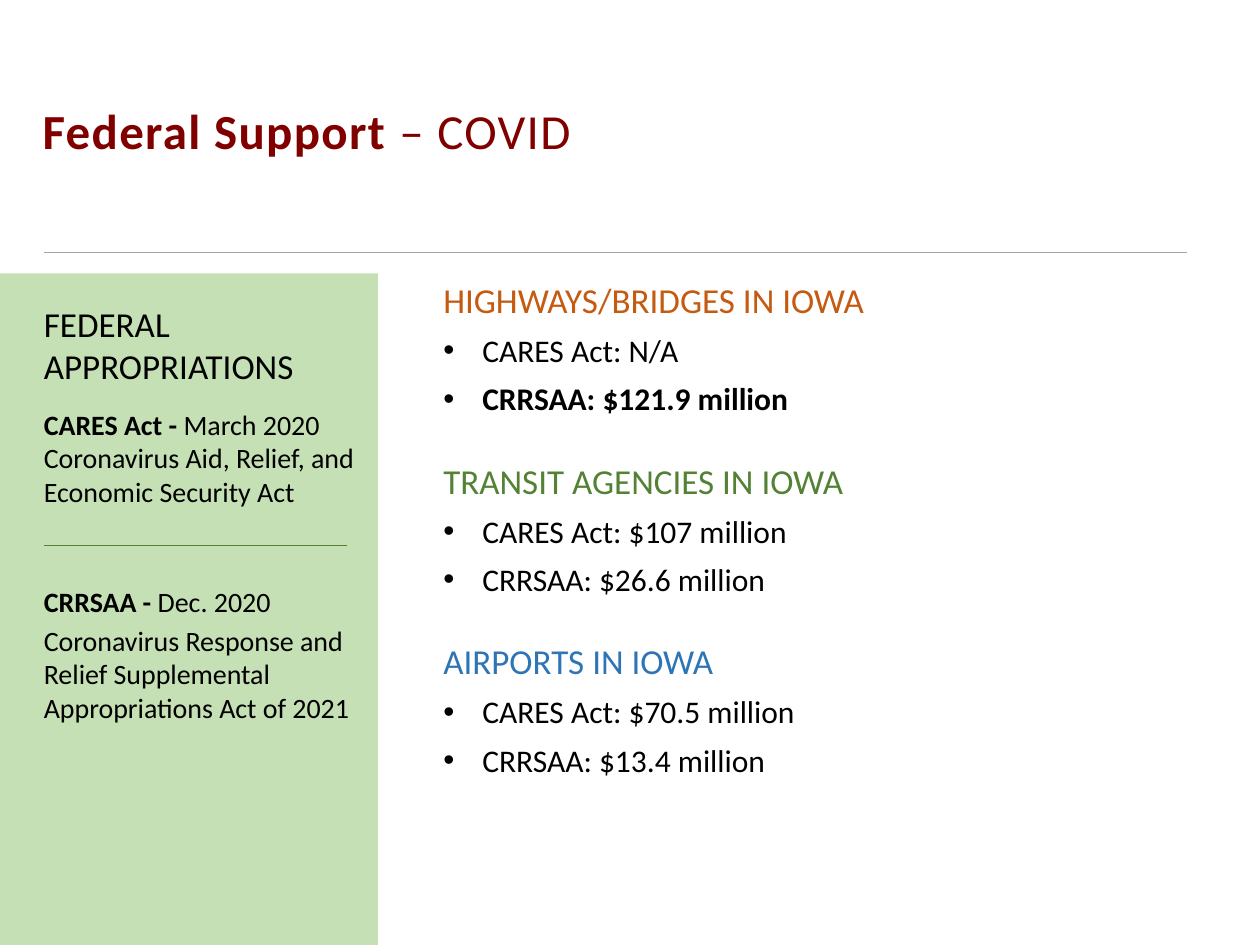
from dataclasses import dataclass

from lxml.etree import SubElement
from pptx import Presentation
from pptx.dml.color import RGBColor
from pptx.enum.shapes import MSO_CONNECTOR as Connector, MSO_SHAPE as Shape
from pptx.oxml.ns import qn
from pptx.util import Inches, Pt


@dataclass(frozen=True)
class Theme:
    font: str = "Calibri"
    title_size: int = 28
    heading_size: int = 20
    bullet_size: int = 18
    note_size: int = 16
    title: str = "800000"
    text: str = "000000"
    panel: str = "C5E0B4"
    rule: str = "A5A5A5"
    orange: str = "C55A11"
    green: str = "548235"
    blue: str = "2E75B6"


THEME = Theme()
CELL = Inches(0.25)
COLUMNS, ROWS = 40, 30
SECTIONS = [
    ("HIGHWAYS/BRIDGES IN IOWA", THEME.orange,
     [("CARES Act: N/A", False), ("CRRSAA: $121.9 million", True)]),
    ("TRANSIT AGENCIES IN IOWA", THEME.green,
     [("CARES Act: $107 million", False), ("CRRSAA: $26.6 million", False)]),
    ("AIRPORTS IN IOWA", THEME.blue,
     [("CARES Act: $70.5 million", False), ("CRRSAA: $13.4 million", False)]),
]


def cells(*counts):
    """Turn counts of grid cells into lengths."""
    return [round(count * CELL) for count in counts]


def add_panel(page, color, *place):
    panel = page.shapes.add_shape(Shape.RECTANGLE, *cells(*place))
    panel.shadow.inherit = False
    panel.fill.solid()
    panel.fill.fore_color.rgb = RGBColor.from_string(color)
    panel.line.fill.background()


def add_rule(page, color, left, right, row):
    rule = page.shapes.add_connector(
        Connector.STRAIGHT, *cells(left, row, right, row))
    rule.line.color.rgb = RGBColor.from_string(color)
    rule.line.width = Pt(0.5)
    SubElement(rule._element.spPr, qn("a:effectLst"))


def add_text(page, *place):
    """Add a wrapping text box and return its frame."""
    frame = page.shapes.add_textbox(*cells(*place)).text_frame
    frame.word_wrap = True
    return frame


def add_para(frame, spans, size, color=THEME.text, after=0, tracking=0):
    """Add a paragraph of (text, bold) spans, using the empty first one."""
    first = frame.paragraphs[0]
    para = frame.add_paragraph() if first.runs else first
    para.space_after = Pt(after)
    for text, bold in spans:
        span = para.add_run()
        span.text = text
        look = {"name": THEME.font, "size": Pt(size), "bold": bold}
        for name, value in look.items():
            setattr(span.font, name, value)
        span.font.color.rgb = RGBColor.from_string(color)
        if tracking:
            span._r.get_or_add_rPr().set("spc", str(round(tracking * 100)))
    return para


def add_bullet(frame, text, bold, after):
    para = add_para(frame, [(text, bold)], THEME.bullet_size, after=after)
    props = para._p.get_or_add_pPr()
    indent = Inches(0.31)
    for name, value in {"marL": indent, "indent": -indent}.items():
        props.set(name, str(value))
    SubElement(props, qn("a:buFont"), typeface="Arial")
    SubElement(props, qn("a:buChar"), char="•")


def add_title(page):
    frame = add_text(page, 0.96, 3, 39, 2.28)
    add_para(frame, [("Federal Support ", True), ("– COVID", False)],
             THEME.title_size, THEME.title, tracking=0.8)


def add_sidebar(page):
    frame = add_text(page, 1, 9.4, 10.68, 13.92)
    add_para(frame, [("FEDERAL APPROPRIATIONS", False)],
             THEME.heading_size, after=12)
    for spans, after in [
        ([("CARES Act - ", True), ("March 2020", False)], 0),
        ([("Coronavirus Aid, Relief, and Economic Security Act", False)], 43.5),
        ([("CRRSAA - ", True), ("Dec. 2020", False)], 3),
        ([("Coronavirus Response and Relief Supplemental "
           "Appropriations Act of 2021", False)], 0),
    ]:
        add_para(frame, spans, THEME.note_size, after=after)


def add_sections(page):
    frame = add_text(page, 13.68, 8.64, 20, 16.44)
    for heading, color, bullets in SECTIONS:
        add_para(frame, [(heading, False)], THEME.heading_size, color, after=6)
        for number, (text, bold) in enumerate(bullets, 1):
            add_bullet(frame, text, bold, 24 if number == len(bullets) else 6)


def main():
    deck = Presentation()
    deck.slide_width, deck.slide_height = cells(COLUMNS, ROWS)
    page = deck.slides.add_slide(deck.slide_layouts[6])
    panel_top = 8.68
    add_panel(page, THEME.panel, 0, panel_top, 12, ROWS - panel_top)
    add_title(page)
    add_sidebar(page)
    add_sections(page)
    add_rule(page, THEME.rule, 1.4, 37.68, 8)
    add_rule(page, THEME.green, 1.4, 11, 17.32)
    deck.save("out.pptx")


if __name__ == "__main__":
    main()
